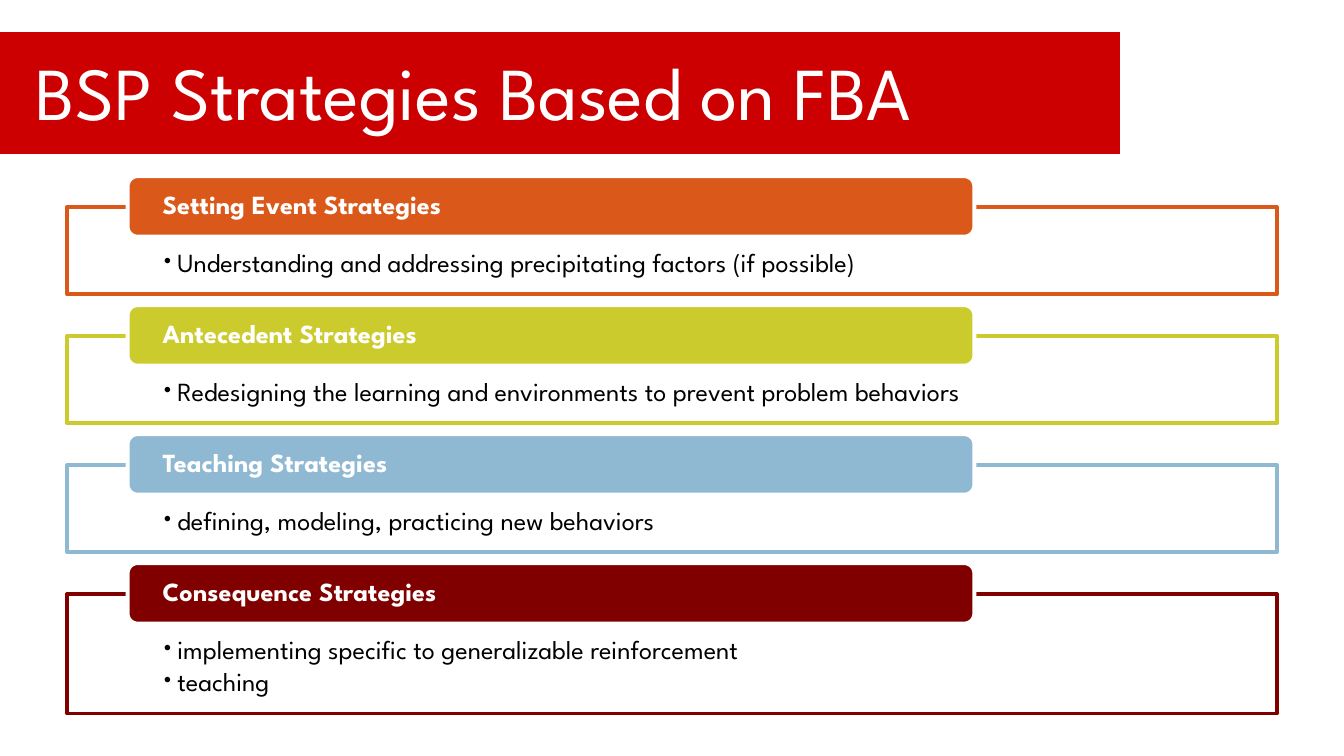
from lxml.etree import SubElement
from pptx import Presentation
from pptx.dml.color import RGBColor as RGB
from pptx.enum.shapes import MSO_SHAPE as Kind
from pptx.enum.text import MSO_ANCHOR as Anchor, PP_ALIGN as Align
from pptx.oxml.ns import qn
from pptx.util import Pt

FONT = "League Spartan"
HEX = {
    "red": "CC0000", "white": "FFFFFF", "black": "000000",
    "orange": "DB581B", "lime": "CCCB2E", "blue": "8FB8D3", "maroon": "800000",
}
PARTS = [
    ("Setting Event Strategies", "orange", 46.8,
     ["Understanding and addressing precipitating factors (if possible)"]),
    ("Antecedent Strategies", "lime", 46.8,
     ["Redesigning the learning and environments to prevent problem behaviors"]),
    ("Teaching Strategies", "blue", 46.8,
     ["defining, modeling, practicing new behaviors"]),
    ("Consequence Strategies", "maroon", 64.1,
     ["implementing specific to generalizable reinforcement", "teaching"]),
]


def add_box(slide, kind, box, fill, line, width):
    """Add a filled, outlined shape without a shadow."""
    shape = slide.shapes.add_shape(kind, *map(Pt, box))
    shape.shadow.inherit = False
    shape.fill.solid()
    shape.fill.fore_color.rgb = RGB.from_string(HEX[fill])
    shape.line.color.rgb = RGB.from_string(HEX[line])
    shape.line.width = Pt(width)
    return shape


def set_text(shape, lines, size, color, pads, anchor, bold=False):
    """Fill a shape with left-aligned lines and return its paragraphs."""
    frame = shape.text_frame
    frame.word_wrap = True
    frame.vertical_anchor = anchor
    (frame.margin_left, frame.margin_top,
     frame.margin_right, frame.margin_bottom) = map(Pt, pads)
    frame.text = "\n".join(lines)
    for para in frame.paragraphs:
        para.alignment = Align.LEFT
        para.font.name = FONT
        para.font.size = Pt(size)
        para.font.bold = bold
        para.font.color.rgb = RGB.from_string(HEX[color])
    return frame.paragraphs


def add_bullet(para):
    """Give a paragraph a hanging round bullet."""
    props = para._p.get_or_add_pPr()
    props.set("marL", str(Pt(8.64)))
    props.set("indent", str(-Pt(8.64)))
    SubElement(props, qn("a:buFont")).set("typeface", FONT)
    SubElement(props, qn("a:buChar")).set("char", "•")
    props.append(props.find(qn("a:defRPr")))


def add_title(slide, text, left, top, width, height):
    """Draw the title band and its text."""
    add_box(slide, Kind.RECTANGLE, (left, top, width, height), "red", "white", 0.75)
    box = slide.shapes.add_textbox(
        Pt(left + 18), Pt(top + 2.9), Pt(width - 18), Pt(58.3))
    set_text(box, [text], 40, "white", (7.2, 3.6, 7.2, 3.6), Anchor.MIDDLE)


def add_part(slide, name, color, lines, left, top, width, height):
    """Draw a framed list with its label over the top edge."""
    frame = add_box(slide, Kind.RECTANGLE, (left, top, width, height),
                    "white", color, 2.08)
    paras = set_text(frame, lines, 14, "black", (50.4, 23, 50.4, 7.9), Anchor.TOP)
    for i, para in enumerate(paras):
        para.line_spacing = 0.9
        para.space_before = Pt(2.1 if i else 0)
        add_bullet(para)
    label = add_box(slide, Kind.ROUNDED_RECTANGLE,
                    (left + width * 0.05, top - 16.5, width * 0.7, 32.4),
                    color, "white", 2.08)
    label.adjustments[0] = 0.167
    paras = set_text(label, [name], 14, "white", (17.2, 0, 17.2, 0),
                     Anchor.MIDDLE, True)
    paras[0].line_spacing = 0.9


def main():
    """Build and save the slide."""
    deck = Presentation()
    deck.slide_width, deck.slide_height = Pt(720), Pt(405)
    slide = deck.slides.add_slide(deck.slide_layouts[6])
    add_title(slide, "BSP Strategies Based on FBA", -5.8, 16.6, 606.2, 66.2)
    top = 110.9
    for name, color, height, lines in PARTS:
        add_part(slide, name, color, lines, 36, top, 648, height)
        top += height + 22.3
    deck.save("out.pptx")


if __name__ == "__main__":
    main()
